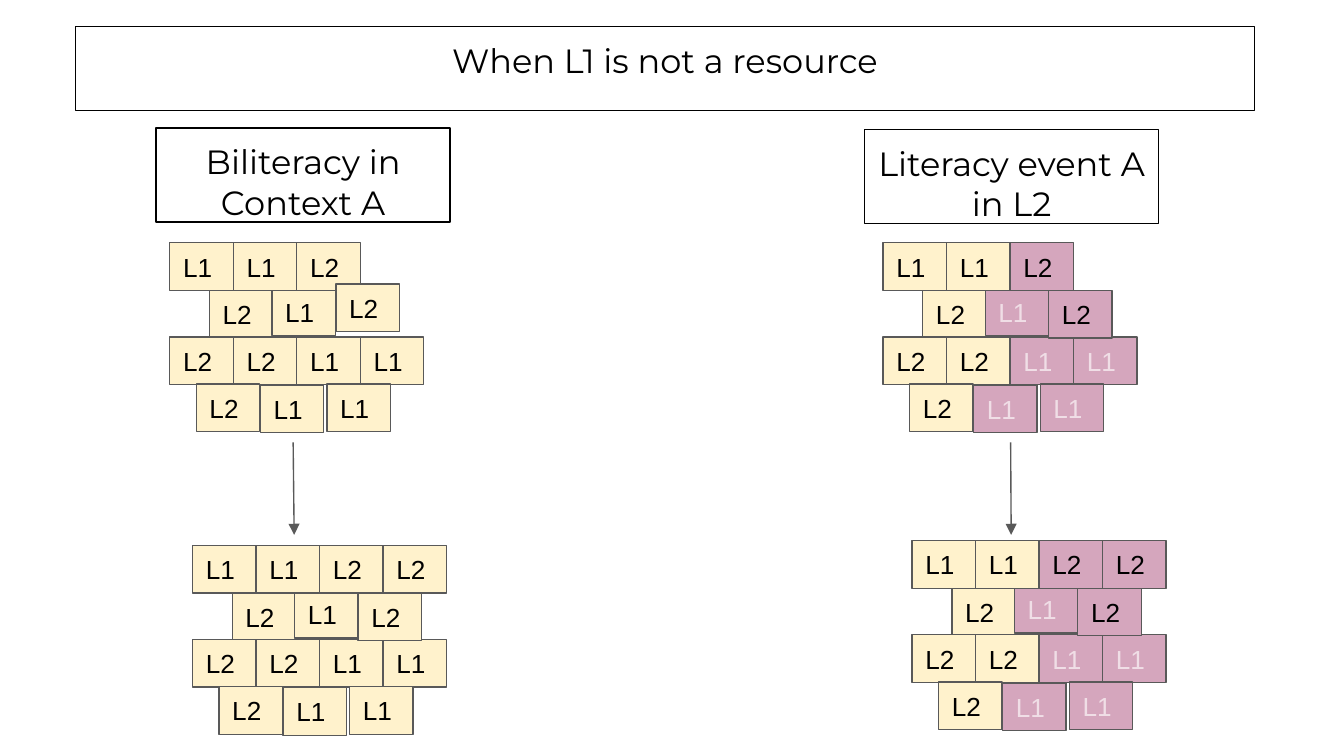
from dataclasses import dataclass
from typing import NamedTuple

from lxml.etree import SubElement
from pptx import Presentation
from pptx.dml.color import RGBColor
from pptx.enum.shapes import MSO_CONNECTOR as Connector, MSO_SHAPE as Shape
from pptx.enum.text import MSO_ANCHOR as Anchor, PP_ALIGN as Align
from pptx.oxml.ns import qn
from pptx.util import Cm, Pt


@dataclass(frozen=True)
class Theme:
    ink: str = "000000"
    outline: str = "595959"
    cream: str = "FFF2CC"
    pink: str = "D5A6BD"
    faded: str = "F0DEE6"
    heading_font: str = "Montserrat"
    brick_font: str = "Arial"
    heading_size: float = 18
    brick_size: float = 14
    line_width: float = 0.75
    inset: float = 0.25


class Box(NamedTuple):
    left: float
    top: float
    width: float
    height: float


class Place(NamedTuple):
    left: float
    top: float


THEME = Theme()
BRICK_WIDTH, BRICK_HEIGHT = 1.2, 0.9
ROW_PITCH = 0.89
WALL_LABELS = (
    ("L1", "L1", "L2", "L2"),
    ("L2", "L1", "L2"),
    ("L2", "L2", "L1", "L1"),
    ("L2", "L1", "L1"),
)
EVEN_ROW = tuple(Place(column * BRICK_WIDTH, 0) for column in range(4))
WALL_OFFSETS = (
    EVEN_ROW,
    (Place(0.75, 0.01), Place(1.93, -0.04), Place(3.13, 0.01)),
    EVEN_ROW,
    (Place(0.5, 0), Place(1.71, 0.02), Place(2.97, 0)),
)
RAISED_BRICK = Place(3.14, -0.11)


def color(value):
    return RGBColor.from_string(value)


def add_label(page, box, text, font, size, ink, outline, fill=None):
    label = page.shapes.add_shape(Shape.RECTANGLE, *map(Cm, box))
    label.shadow.inherit = False
    if fill:
        label.fill.solid()
        label.fill.fore_color.rgb = color(fill)
    else:
        label.fill.background()
    label.line.color.rgb = color(outline)
    label.line.width = Pt(THEME.line_width)
    frame = label.text_frame
    frame.word_wrap = True
    frame.margin_left = frame.margin_right = Cm(THEME.inset)
    frame.margin_top = frame.margin_bottom = Cm(THEME.inset)
    frame.vertical_anchor = Anchor.MIDDLE if fill else Anchor.TOP
    para = frame.paragraphs[0]
    para.text = text
    para.alignment = Align.LEFT if fill else Align.CENTER
    para.font.name = font
    para.font.size = Pt(size)
    para.font.color.rgb = color(ink)


def add_heading(page, box, text):
    add_label(page, box, text, THEME.heading_font, THEME.heading_size,
              THEME.ink, THEME.ink)


def stacking_order(cell):
    row, column = cell
    return cell == (1, 2), row != 1, row, column


def add_wall(page, origin, top_count, fades, raised=False):
    cells = [(row, column) for row, labels in enumerate(WALL_LABELS)
             for column in range(len(labels) if row else top_count)]
    for row, column in sorted(cells, key=stacking_order):
        pink = fades and column >= 2 - row % 2
        offset = WALL_OFFSETS[row][column]
        if raised and (row, column) == (1, 2):
            offset = RAISED_BRICK
        box = Box(origin.left + offset.left,
                  origin.top + row * ROW_PITCH + offset.top,
                  BRICK_WIDTH, BRICK_HEIGHT)
        text = WALL_LABELS[row][column]
        ink = THEME.faded if pink and text == "L1" else THEME.ink
        add_label(page, box, text, THEME.brick_font, THEME.brick_size,
                  ink, THEME.outline, THEME.pink if pink else THEME.cream)


def add_arrow(page, box):
    arrow = page.shapes.add_connector(
        Connector.STRAIGHT, Cm(box.left), Cm(box.top),
        Cm(box.left + box.width), Cm(box.top + box.height))
    arrow.line.color.rgb = color(THEME.outline)
    arrow.line.width = Pt(THEME.line_width)
    SubElement(arrow.line._get_or_add_ln(), qn("a:tailEnd"), type="triangle")
    SubElement(arrow._element.spPr, qn("a:effectLst"))


def add_context(page, box, heading, upper, arrow, lower, fades):
    def inside(place):
        return Place(box.left + place.left, box.top + place.top)

    add_heading(page, box, heading)
    add_wall(page, inside(upper), 3, fades, raised=not fades)
    add_arrow(page, Box(*inside(arrow), arrow.width, arrow.height))
    add_wall(page, inside(lower), 4, fades)


def main():
    deck = Presentation()
    deck.slide_width, deck.slide_height = Cm(25.4), Cm(14.29)
    page = deck.slides.add_slide(deck.slide_layouts[6])
    add_heading(page, Box(1.43, 0.5, 22.28, 1.59), "When L1 is not a resource")
    add_context(page, Box(2.95, 2.42, 5.56, 1.78), "Biliteracy in Context A",
                upper=Place(0.26, 2.17), arrow=Box(2.59, 5.94, 0.02, 1.75),
                lower=Place(0.69, 7.89), fades=False)
    add_context(page, Box(16.34, 2.45, 5.56, 1.78), "Literacy event A in L2",
                upper=Place(0.35, 2.14), arrow=Box(2.76, 5.91, 0.01, 1.75),
                lower=Place(0.9, 7.77), fades=True)
    deck.save("out.pptx")


if __name__ == "__main__":
    main()
